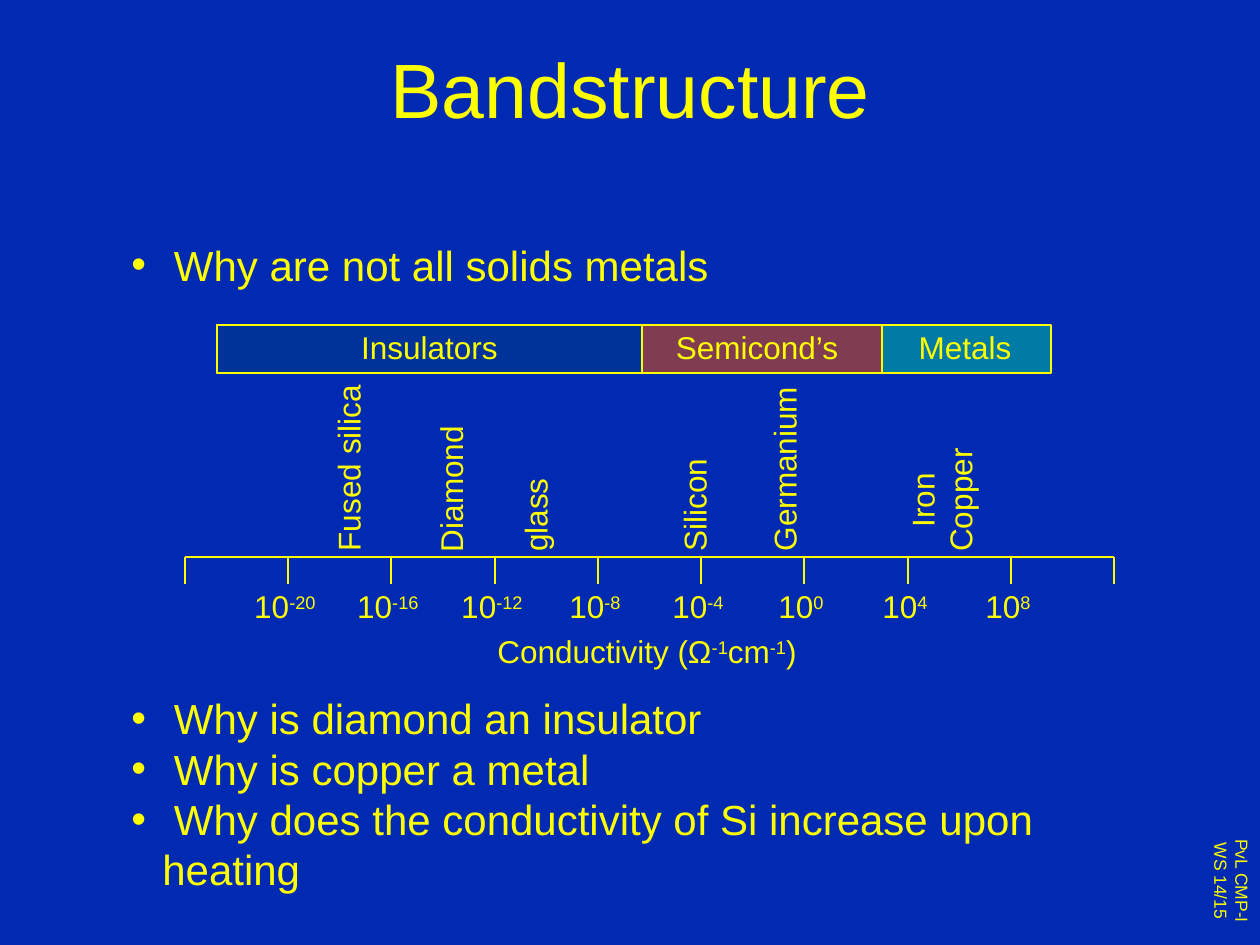
from lxml import etree
from pptx import Presentation
from pptx.dml.color import RGBColor
from pptx.enum.shapes import MSO_CONNECTOR, MSO_SHAPE
from pptx.enum.text import MSO_ANCHOR, PP_ALIGN
from pptx.oxml.ns import qn
from pptx.util import Pt

RECTANGLE = MSO_SHAPE.RECTANGLE
STRAIGHT = MSO_CONNECTOR.STRAIGHT
CENTER, LEFT = PP_ALIGN.CENTER, PP_ALIGN.LEFT
MIDDLE = MSO_ANCHOR.MIDDLE
PX = 914400 / 126

THEME = {
    "background": RGBColor.from_string("002AB2"),
    "ink": RGBColor.from_string("FFFF00"),
    "metals": RGBColor.from_string("00CC99"),
    "semiconductors": RGBColor.from_string("FF0000"),
    "insulators": RGBColor.from_string("003399"),
    "font": "Arial",
    "title": Pt(44),
    "body": Pt(24),
    "label": Pt(18),
    "footer": Pt(10),
    "line": Pt(0.75),
}


def px(*lengths):
    return [round(length * PX) for length in lengths]


def write(shape, lines, size, alignment=CENTER, wrap=False):
    """Fill a shape with lines; each line is a list of runs, "^" marks a superscript."""
    frame = shape.text_frame
    frame.word_wrap = wrap
    if size == "label":
        # Labels use the full box width, so no word is broken
        frame.margin_left = frame.margin_right = 0
    for index, line in enumerate(lines):
        paragraph = frame.paragraphs[0] if index == 0 else frame.add_paragraph()
        paragraph.alignment = alignment
        for text in line:
            run = paragraph.add_run()
            run.text = text.removeprefix("^")
            for name, value in {"name": THEME["font"], "size": THEME[size]}.items():
                setattr(run.font, name, value)
            run.font.color.rgb = THEME["ink"]
            if text.startswith("^"):
                run.font._element.set("baseline", "30000")
    return frame


presentation = Presentation()
presentation.slide_width, presentation.slide_height = px(1260, 945)
slide = presentation.slides.add_slide(presentation.slide_layouts[5])
slide.background.fill.solid()
slide.background.fill.fore_color.rgb = THEME["background"]
shapes = slide.shapes

# Title
title = shapes.title
title.left, title.top, title.width, title.height = px(95, 9, 1071, 158)
write(title, [["Bandstructure"]], "title", wrap=True).vertical_anchor = MIDDLE

# Vertical course label
footer = shapes.add_textbox(*px(1191, 832, 68, 98))
frame = write(footer, [["PvL CMP-I"], ["WS 14/15"]], "footer")
frame._txBody.bodyPr.set("vert", "vert")

# Questions, with room for the diagram after the first one
questions = [
    " Why are not all solids metals",
    " Why is diamond an insulator",
    " Why is copper a metal",
    " Why does the conductivity of Si increase upon heating",
]
body = shapes.add_textbox(*px(119, 233, 1061, 616))
frame = write(body, [[question] for question in questions], "body", LEFT, wrap=True)
indent = px(31)[0]
for paragraph in frame.paragraphs:
    paragraph.line_spacing = Pt(28.8)
    properties = paragraph._p.get_or_add_pPr()
    properties.set("marL", str(indent))
    properties.set("indent", str(-indent))
    etree.SubElement(properties, qn("a:buFont"), typeface=THEME["font"])
    etree.SubElement(properties, qn("a:buChar"), char="•")
frame.paragraphs[1].space_before = Pt(8 * 28.8)

# Material classes: the metals bar lies behind the other two
bars = [
    ("metals", 217, 834, 50),
    ("semiconductors", 641, 241, 50),
    ("insulators", 217, 425, 100),
]
for color, left, width, opacity in bars:
    bar = shapes.add_shape(RECTANGLE, *px(left, 325, width, 48))
    bar.shadow.inherit = False
    bar.fill.solid()
    bar.fill.fore_color.rgb = THEME[color]
    bar.line.color.rgb = THEME["ink"]
    bar.line.width = THEME["line"]
    if opacity < 100:
        color_element = bar._element.spPr.find(qn("a:solidFill"))[0]
        etree.SubElement(color_element, qn("a:alpha"), val=str(opacity * 1000))

for text, left, width in [("Insulators", 349, 161), ("Semicond’s", 663, 188), ("Metals", 906, 118)]:
    write(shapes.add_textbox(*px(left, 322, width, 50)), [[text]], "label")

# Conductivity axis with evenly spaced ticks
axis_left, axis_right, axis_y, tick_length = 185, 1114, 557, 27
ticks = [round(axis_left + step * (axis_right - axis_left) / 9) for step in range(10)]
lines = [(axis_left, axis_y, axis_right, axis_y)]
lines += [(x, axis_y, x, axis_y + tick_length) for x in ticks]
for ends in lines:
    connector = shapes.add_connector(STRAIGHT, *px(*ends))
    connector.line.color.rgb = THEME["ink"]
    connector.line.width = THEME["line"]
    etree.SubElement(connector._element.spPr, qn("a:effectLst"))

# Powers of ten under the inner ticks, set slightly to the left
label_shift = 3
for x, exponent in zip(ticks[1:-1], range(-20, 9, 4)):
    width = 60 + 10 * len(str(exponent))
    label = shapes.add_textbox(*px(x - label_shift - width // 2, 581, width, 50))
    write(label, [["10", f"^{exponent}"]], "label")

axis_title = shapes.add_textbox(*px(482, 626, 330, 50))
write(axis_title, [["Conductivity (Ω", "^-1", "cm", "^-1", ")"]], "label")

# Materials, turned upright and standing on a common foot
foot = 564
materials = [
    (["Fused silica"], 348, 192, 50),
    (["Diamond"], 450, 151, 50),
    (["glass"], 535, 98, 50),
    (["Silicon"], 694, 118, 50),
    (["Germanium"], 784, 190, 50),
    (["Iron", "Copper"], 941, 128, 88),
]
for names, center, length, thickness in materials:
    top = foot - (length + thickness) // 2
    label = shapes.add_textbox(*px(center - length // 2, top, length, thickness))
    label.rotation = 270
    write(label, [[name] for name in names], "label")

presentation.save("out.pptx")
